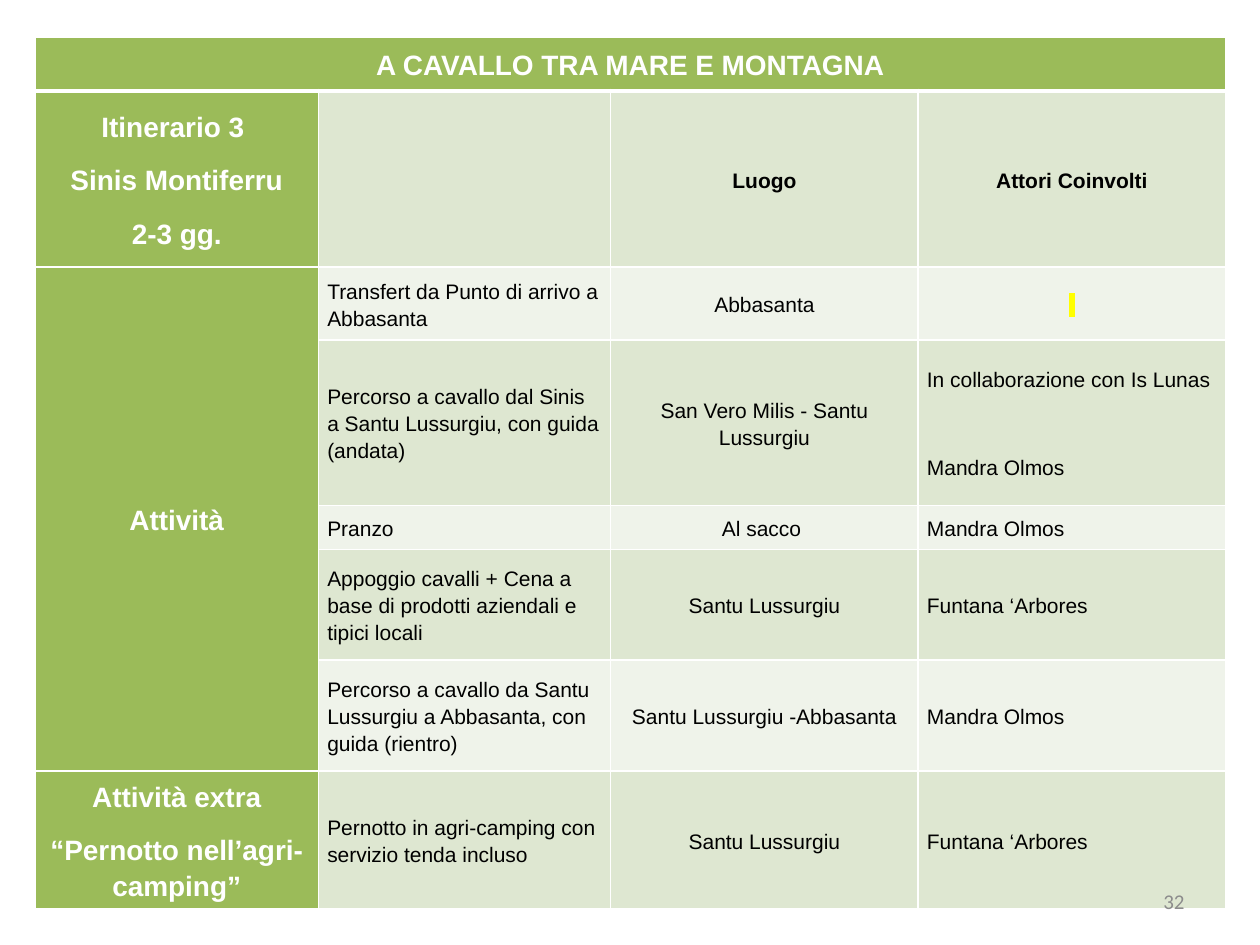
"""Build the riding itinerary slide with its schedule table."""
from lxml.etree import SubElement
from pptx import Presentation
from pptx.dml.color import RGBColor
from pptx.enum.text import MSO_ANCHOR as Anchor, PP_ALIGN as Align
from pptx.oxml.ns import qn
from pptx.util import Pt

COLORS = {"green": "9BBB59", "sage": "DEE7D1", "pale": "EFF3EA", "white": "FFFFFF",
          "black": "000000", "gray": "8C8C8C", "yellow": "FFFF00"}


def write(para, text, size=12, color="black", bold=False, align=Align.LEFT, font="Arial"):
    para.alignment = align
    span = para.add_run()
    span.text = text
    span.font.size = Pt(size)
    span.font.name = font
    span.font.bold = bold
    span.font.color.rgb = RGBColor.from_string(COLORS[color])
    return span


def add_border(cell, side, width):
    line = SubElement(cell._tc.get_or_add_tcPr(), qn(f"a:ln{side}"), w=str(Pt(width)))
    SubElement(SubElement(line, qn("a:solidFill")), qn("a:srgbClr"), val=COLORS["white"])


deck = Presentation()
deck.slide_width, deck.slide_height = Pt(720), Pt(540)
page = deck.slides.add_slide(deck.slide_layouts[6])

ROWS = [
    ["A CAVALLO TRA MARE E MONTAGNA", "", "", ""],
    ["Itinerario 3 \nSinis Montiferru\n2-3 gg.", "", "Luogo", "Attori Coinvolti"],
    ["Attività", "Transfert da Punto di arrivo a Abbasanta", "Abbasanta", "\u00a0"],
    ["", "Percorso a cavallo dal Sinis a Santu Lussurgiu, con guida (andata) ",
     "San Vero Milis - Santu Lussurgiu", "In collaborazione con Is Lunas\nMandra Olmos"],
    ["", "Pranzo", "Al sacco ", "Mandra Olmos"],
    ["", "Appoggio cavalli + Cena a base di prodotti aziendali e tipici locali",
     "Santu Lussurgiu", "Funtana ‘Arbores"],
    ["", "Percorso a cavallo da Santu Lussurgiu a Abbasanta, con guida (rientro)",
     "Santu Lussurgiu -Abbasanta", "Mandra Olmos"],
    ["Attività extra\n“Pernotto nell’agri-camping”",
     "Pernotto in agri-camping con servizio tenda incluso",
     "Santu Lussurgiu", "Funtana ‘Arbores"],
]
WIDTHS = [162, 167, 175.7, 175.7]
HEIGHTS = [31, 100.6, 41.7, 94.5, 25.2, 63.3, 63.3, 79]

table = page.shapes.add_table(len(ROWS), len(WIDTHS), Pt(20), Pt(21),
                              Pt(sum(WIDTHS)), Pt(sum(HEIGHTS))).table
for column, width in zip(table.columns, WIDTHS):
    column.width = Pt(width)
for row, height in zip(table.rows, HEIGHTS):
    row.height = Pt(height)
table.cell(0, 0).merge(table.cell(0, 3))
table.cell(2, 0).merge(table.cell(6, 0))

for r, texts in enumerate(ROWS):
    for c, text in enumerate(texts):
        cell = table.cell(r, c)
        heading = r == 0 or c == 0
        for side in "LRTB":
            add_border(cell, side, 3 if (r, side) in [(0, "B"), (1, "T")] else 1)
        cell.fill.solid()
        fill = "green" if heading else "sage" if r % 2 else "pale"
        cell.fill.fore_color.rgb = RGBColor.from_string(COLORS[fill])
        cell.vertical_anchor = Anchor.MIDDLE
        cell.margin_left = cell.margin_right = Pt(5)
        cell.margin_top = cell.margin_bottom = 0
        if not text:
            continue
        centered = heading or r == 1 or c == 2 or text == "\u00a0"
        for i, line in enumerate(text.split("\n")):
            para = cell.text_frame.add_paragraph() if i else cell.text_frame.paragraphs[0]
            para.line_spacing = 1.15
            para.space_after = Pt(10)
            if i and not heading:
                para.space_before = Pt(25)
            span = write(para, line, size=16 if heading else 12,
                         color="white" if heading else "black", bold=heading or r == 1,
                         align=Align.CENTER if centered else Align.LEFT)
            if line == "\u00a0":
                props = span.font._element
                highlight = SubElement(props, qn("a:highlight"))
                SubElement(highlight, qn("a:srgbClr"), val=COLORS["yellow"])
                props.find(qn("a:solidFill")).addnext(highlight)

box = page.shapes.add_textbox(Pt(516), Pt(500.5), Pt(168), Pt(28.75))
box.text_frame.word_wrap = True
box.text_frame.vertical_anchor = Anchor.MIDDLE
write(box.text_frame.paragraphs[0], "32", color="gray", align=Align.RIGHT, font="Calibri")

deck.save("out.pptx")
